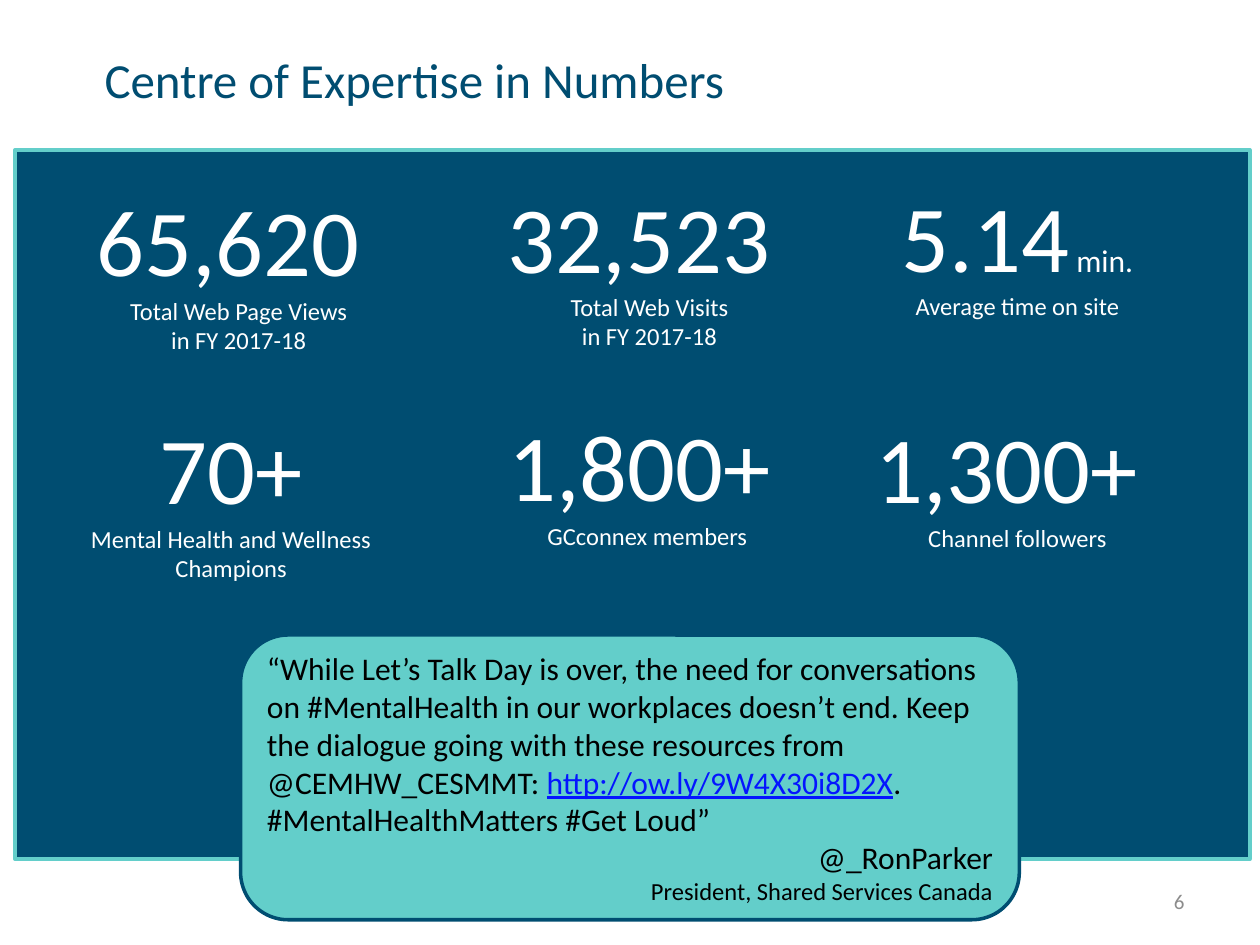
from pptx import Presentation
from pptx import util as u
from pptx.dml.color import RGBColor
from pptx.enum import shapes, text

COLORS = {"navy": "004D71", "teal": "63CECA", "white": "FFFFFF",
          "black": "000000", "link": "0415FF", "grey": "8C8C8C"}


def style(font, size, color):
    font.name = "Calibri"
    font.size = u.Pt(size)
    font.color.rgb = RGBColor.from_string(COLORS[color])


def add_panel(kind, box, fill, line):
    panel = slide.shapes.add_shape(kind, *map(u.Inches, box))
    panel.shadow.inherit = False
    panel.fill.solid()
    panel.fill.fore_color.rgb = RGBColor.from_string(COLORS[fill])
    panel.line.color.rgb = RGBColor.from_string(COLORS[line])
    panel.line.width = u.Pt(2)
    panel.text_frame.word_wrap = True
    panel.text_frame.vertical_anchor = text.MSO_ANCHOR.MIDDLE
    return panel


prs = Presentation()
prs.slide_width, prs.slide_height = u.Inches(10), u.Inches(7.5)
slide = prs.slides.add_slide(prs.slide_layouts[5])

heading = slide.shapes.title
heading.left, heading.top = u.Inches(0.83), u.Inches(0.15)
heading.width, heading.height = u.Inches(5.94), u.Inches(0.96)
frame = heading.text_frame
frame.text = "Centre of Expertise in Numbers"
frame.margin_left = frame.margin_right = frame.margin_top = frame.margin_bottom = 0
frame.word_wrap = False
frame.auto_size = text.MSO_AUTO_SIZE.NONE
frame.vertical_anchor = text.MSO_ANCHOR.MIDDLE
frame.paragraphs[0].alignment = text.PP_ALIGN.LEFT
style(frame.paragraphs[0].font, 28, "navy")

page = slide.shapes.add_textbox(*map(u.Inches, (7.17, 6.95, 2.33, 0.4))).text_frame
page.word_wrap = True
page.vertical_anchor = text.MSO_ANCHOR.MIDDLE
page.text = "6"
page.paragraphs[0].alignment = text.PP_ALIGN.RIGHT
style(page.paragraphs[0].font, 12, "grey")

add_panel(shapes.MSO_SHAPE.RECTANGLE, (0.12, 1.19, 9.8, 5.63), "navy", "teal")

statistics = [
    ((0.26, 1.42, 3.27, 1.42), "65,620 ", "", "Total Web Page Views\vin FY 2017-18"),
    ((3.52, 1.39, 3.27, 1.42), "32,523 ", "", "Total Web Visits\vin FY 2017-18"),
    ((6.44, 1.27, 3.27, 1.42), "5.14", " min.", "Average time on site"),
    ((0.2, 3.25, 3.27, 1.38), "70+", "", "Mental Health and Wellness Champions"),
    ((3.65, 3.11, 3.02, 1.38), "1,800+ ", "", "GCconnex members "),
    ((6.44, 3.09, 3.27, 1.45), "1,300+ ", "", "Channel followers"),
]
for box, figure, unit, caption in statistics:
    frame = add_panel(shapes.MSO_SHAPE.RECTANGLE, box, "navy", "navy").text_frame
    frame.text = f"{figure}\n{caption}"
    for paragraph, size in zip(frame.paragraphs, (54, 14)):
        paragraph.alignment = text.PP_ALIGN.CENTER
        style(paragraph.font, size, "white")
    if unit:
        unit_run = frame.paragraphs[0].add_run()
        unit_run.text = unit
        unit_run.font.size = u.Pt(18)

frame = add_panel(shapes.MSO_SHAPE.ROUNDED_RECTANGLE,
                  (1.91, 5.04, 6.18, 2.26), "teal", "navy").text_frame
quote, author = frame.paragraphs[0], frame.add_paragraph()
quote.alignment, author.alignment = text.PP_ALIGN.LEFT, text.PP_ALIGN.RIGHT
for paragraph in (quote, author):
    style(paragraph.font, 18, "black")

quote.add_run().text = (
    "“While Let’s Talk Day is over, the need for conversations on #MentalHealth "
    "in our workplaces doesn’t end. Keep the dialogue going with these resources "
    "from @CEMHW_CESMMT: ")
address = quote.add_run()
address.text = "http://ow.ly/9W4X30i8D2X"
address.font.underline = True
address.font.color.rgb = RGBColor.from_string(COLORS["link"])
quote.add_run().text = ". #MentalHealthMatters #Get Loud”"

author.add_run().text = "@_RonParker"
author.add_line_break()
role = author.add_run()
role.text = "President, Shared Services Canada"
role.font.size = u.Pt(14)

prs.save("out.pptx")
